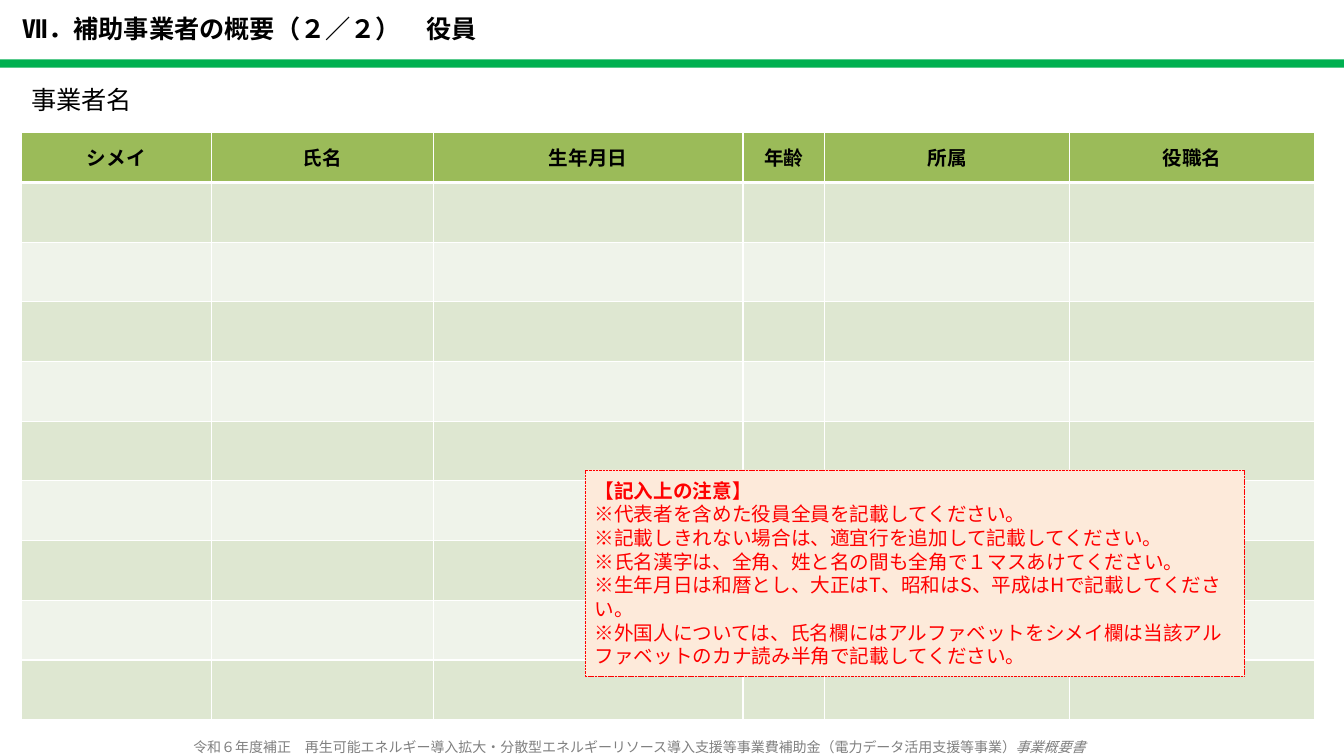
from lxml.etree import SubElement
from pptx import Presentation
from pptx.dml.color import RGBColor
from pptx.enum.dml import MSO_LINE
from pptx.enum.shapes import MSO_SHAPE as Shape
from pptx.enum.text import MSO_ANCHOR as Anchor, PP_ALIGN as Align
from pptx.oxml.ns import qn
from pptx.util import Inches, Pt

FONT = "Noto Sans CJK JP"
BLACK = RGBColor(0x00, 0x00, 0x00)
WHITE = RGBColor(0xFF, 0xFF, 0xFF)
GRAY = RGBColor(0x80, 0x80, 0x80)
RED = RGBColor(0xFF, 0x00, 0x00)
GREEN = RGBColor(0x00, 0xB0, 0x50)
PEACH = RGBColor(0xFD, 0xEA, 0xDA)
HEADER_GREEN = RGBColor(0x9B, 0xBB, 0x59)
BANDS = [RGBColor(0xDE, 0xE7, 0xD1), RGBColor(0xEF, 0xF3, 0xEA)]

HEADERS = ["シメイ", "氏名", "生年月日", "年齢", "所属", "役職名"]
COLUMN_WIDTHS = [1.89, 2.2, 3.07, 0.81, 2.43, 2.43]
BODY_ROWS = 9
HEADER_HEIGHT = 0.5
TABLE_HEIGHT = 5.83
NOTES = [
    "※代表者を含めた役員全員を記載してください。",
    "※記載しきれない場合は、適宜行を追加して記載してください。",
    "※氏名漢字は、全角、姓と名の間も全角で１マスあけてください。",
    "※生年月日は和暦とし、大正はT、昭和はS、平成はHで記載してください。",
    "※外国人については、氏名欄にはアルファベットをシメイ欄は当該アルファベットのカナ読み半角で記載してください。",
]


def add_span(para, text, size=14, color=BLACK, bold=False, italic=False):
    span = para.add_run()
    span.text = text
    font = span.font
    font.name, font.size, font.bold, font.italic = FONT, Pt(size), bold, italic
    font.color.rgb = color
    SubElement(font._element, qn("a:ea"), typeface=FONT)


def set_borders(cell, bottom_width):
    props = cell._tc.get_or_add_tcPr()
    for side, width in [("L", 1), ("R", 1), ("T", 1), ("B", bottom_width)]:
        line = SubElement(props, qn(f"a:ln{side}"), w=str(Pt(width)))
        fill = SubElement(line, qn("a:solidFill"))
        SubElement(fill, qn("a:srgbClr"), val=str(WHITE))


class SlideBuilder:
    def __init__(self, page):
        self.page = page

    def text(self, left, top, width, height, spans, align=Align.LEFT):
        box = self.page.shapes.add_textbox(
            Inches(left), Inches(top), Inches(width), Inches(height))
        frame = box.text_frame
        frame.word_wrap = True
        frame.vertical_anchor = Anchor.MIDDLE
        para = frame.paragraphs[0]
        para.alignment = align
        for text, style in spans:
            add_span(para, text, **style)

    def rectangle(self, left, top, width, height, color):
        shape = self.page.shapes.add_shape(
            Shape.RECTANGLE, Inches(left), Inches(top), Inches(width), Inches(height))
        shape.shadow.inherit = False
        shape.fill.solid()
        shape.fill.fore_color.rgb = color
        shape.line.fill.background()
        return shape

    def callout(self, left, top, width, height, heading, notes):
        shape = self.rectangle(left, top, width, height, PEACH)
        shape.line.color.rgb = RED
        shape.line.width = Pt(0.25)
        shape.line.dash_style = MSO_LINE.SQUARE_DOT
        frame = shape.text_frame
        frame.word_wrap = True
        frame.vertical_anchor = Anchor.MIDDLE
        for index, text in enumerate([heading, *notes]):
            para = frame.add_paragraph() if index else frame.paragraphs[0]
            para.alignment = Align.LEFT
            para.line_spacing = Pt(16.9)
            add_span(para, text, color=RED, bold=index == 0)

    def table(self, left, top):
        table = self.page.shapes.add_table(
            BODY_ROWS + 1, len(HEADERS), Inches(left), Inches(top),
            Inches(sum(COLUMN_WIDTHS)), Inches(TABLE_HEIGHT)).table
        for column, width in zip(table.columns, COLUMN_WIDTHS):
            column.width = Inches(width)
        body_height = (TABLE_HEIGHT - HEADER_HEIGHT) / BODY_ROWS
        for index, row in enumerate(table.rows):
            row.height = Inches(body_height if index else HEADER_HEIGHT)
            for cell in row.cells:
                set_borders(cell, 1 if index else 3)
                cell.fill.solid()
                cell.fill.fore_color.rgb = BANDS[(index - 1) % 2] if index else HEADER_GREEN
        for cell, header in zip(table.rows[0].cells, HEADERS):
            cell.vertical_anchor = Anchor.MIDDLE
            para = cell.text_frame.paragraphs[0]
            para.alignment = Align.CENTER
            add_span(para, header, bold=True)


def main():
    deck = Presentation()
    deck.slide_width, deck.slide_height = Inches(13.33), Inches(7.5)
    builder = SlideBuilder(deck.slides.add_slide(deck.slide_layouts[6]))
    footer = {"size": 10, "color": GRAY}
    builder.text(0, 7.32, 12.68, 0.18, [
        ("令和６年度補正　再生可能エネルギー導入拡大・分散型エネルギーリソース導入支援等事業費補助金（電力データ活用支援等事業）", footer),
        ("事業概要書", {**footer, "italic": True}),
    ], align=Align.CENTER)
    builder.rectangle(-0.01, 0.59, 13.34, 0.08, GREEN)
    builder.table(0.21, 1.31)
    builder.callout(5.8, 4.66, 6.54, 2.05, "【記入上の注意】", NOTES)
    builder.text(0.21, 0.76, 5.75, 0.45, [("事業者名", {"size": 18})])
    builder.text(0.13, 0.06, 5.43, 0.45, [
        ("Ⅶ．補助事業者の概要（２／２）　役員", {"size": 18, "bold": True})])
    deck.save("out.pptx")


if __name__ == "__main__":
    main()
